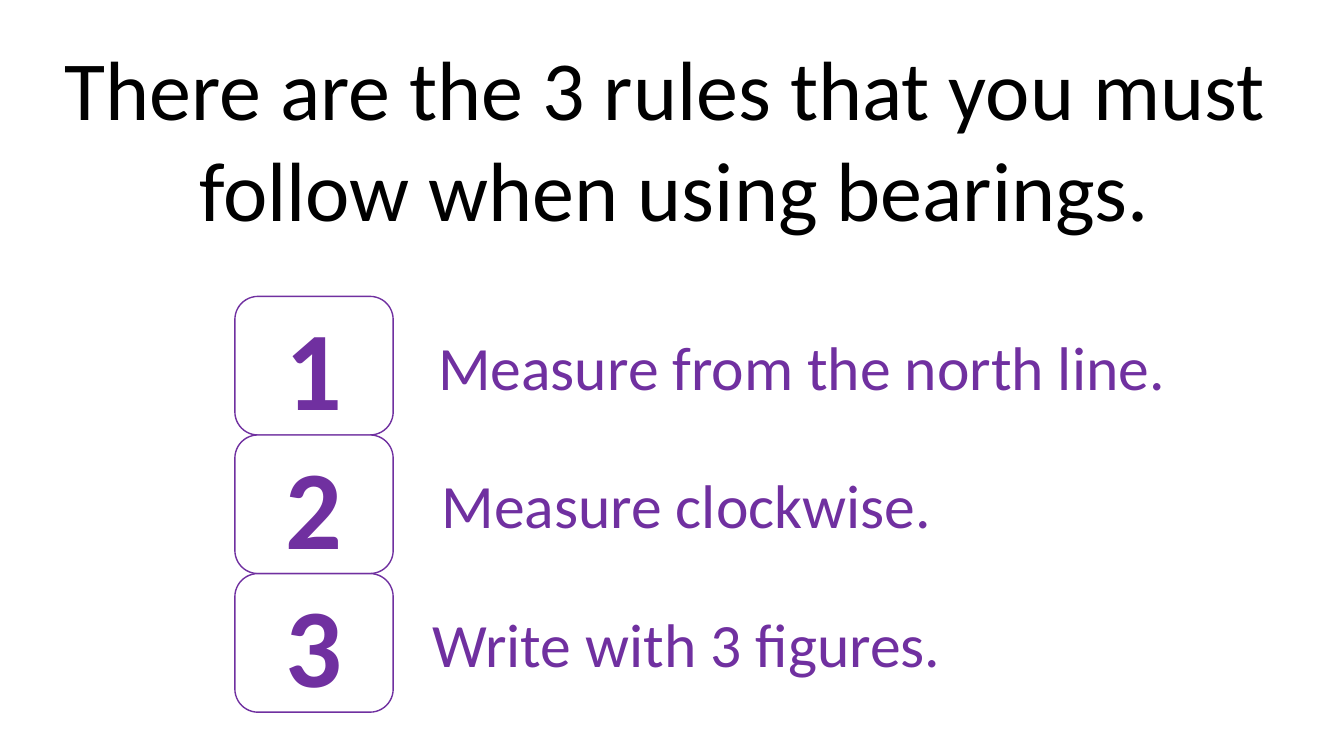
import dataclasses
import typing

import pptx
import pptx.dml.color
import pptx.enum.shapes
import pptx.enum.text
import pptx.util

Inches = pptx.util.Inches
BLACK = pptx.dml.color.RGBColor(0x00, 0x00, 0x00)
WHITE = pptx.dml.color.RGBColor(0xFF, 0xFF, 0xFF)
PURPLE = pptx.dml.color.RGBColor(0x70, 0x30, 0xA0)

FONT = "Calibri"
TITLE_LINES = ["There are the 3 rules that you must ", "follow when using bearings."]
NUMBER_LEFT, NUMBER_WIDTH = 2.33, 1.57
RULES_TOP, RULE_HEIGHT = 2.94, 1.375


@dataclasses.dataclass
class Rule:
    text: str
    width: float


RULES = [
    Rule("Measure from the north line.", 8.11),
    Rule("Measure clockwise.", 5.82),
    Rule("Write with 3 figures.", 5.82),
]


def write_text(
    box: typing.Any,
    lines: list[str],
    *,
    size: float,
    color: pptx.dml.color.RGBColor,
    bold: bool = False,
    anchor: pptx.enum.text.MSO_ANCHOR = pptx.enum.text.MSO_ANCHOR.MIDDLE,
) -> None:
    """Fill a shape with centred paragraphs, one for each line."""
    frame = box.text_frame
    frame.word_wrap = True
    frame.auto_size = pptx.enum.text.MSO_AUTO_SIZE.NONE
    frame.vertical_anchor = anchor
    for index, line in enumerate(lines):
        para = frame.add_paragraph() if index else frame.paragraphs[0]
        para.alignment = pptx.enum.text.PP_ALIGN.CENTER
        span = para.add_run()
        span.text = line
        span.font.name = FONT
        span.font.size = pptx.util.Pt(size)
        span.font.bold = bold
        span.font.color.rgb = color


def add_rounded_box(
    slide: typing.Any, left: float, top: float, width: float, *, outlined: bool
) -> typing.Any:
    box = slide.shapes.add_shape(
        pptx.enum.shapes.MSO_SHAPE.ROUNDED_RECTANGLE,
        Inches(left), Inches(top), Inches(width), Inches(RULE_HEIGHT),
    )
    box.shadow.inherit = False
    box.fill.solid()
    box.fill.fore_color.rgb = WHITE
    if outlined:
        box.line.color.rgb = PURPLE
        box.line.width = pptx.util.Pt(1)
    else:
        box.line.fill.background()
    return box


def add_rule(slide: typing.Any, number: int, rule: Rule) -> None:
    top = RULES_TOP + (number - 1) * RULE_HEIGHT
    text_box = add_rounded_box(
        slide, NUMBER_LEFT + NUMBER_WIDTH, top, rule.width, outlined=False
    )
    write_text(text_box, [rule.text], size=44, color=PURPLE)
    number_box = add_rounded_box(slide, NUMBER_LEFT, top, NUMBER_WIDTH, outlined=True)
    write_text(number_box, [str(number)], size=80, color=PURPLE, bold=True)


def main() -> None:
    deck = pptx.Presentation()
    deck.slide_width, deck.slide_height = Inches(13.33), Inches(7.5)
    slide = deck.slides.add_slide(deck.slide_layouts.get_by_name("Title Only"))

    title = slide.shapes.title
    title.left, title.top = Inches(0.45), Inches(0.31)
    title.width, title.height = Inches(12.48), Inches(2.12)
    write_text(
        title, TITLE_LINES, size=60, color=BLACK, anchor=pptx.enum.text.MSO_ANCHOR.TOP
    )

    for number, rule in enumerate(RULES, start=1):
        add_rule(slide, number, rule)

    deck.save("out.pptx")


if __name__ == "__main__":
    main()
